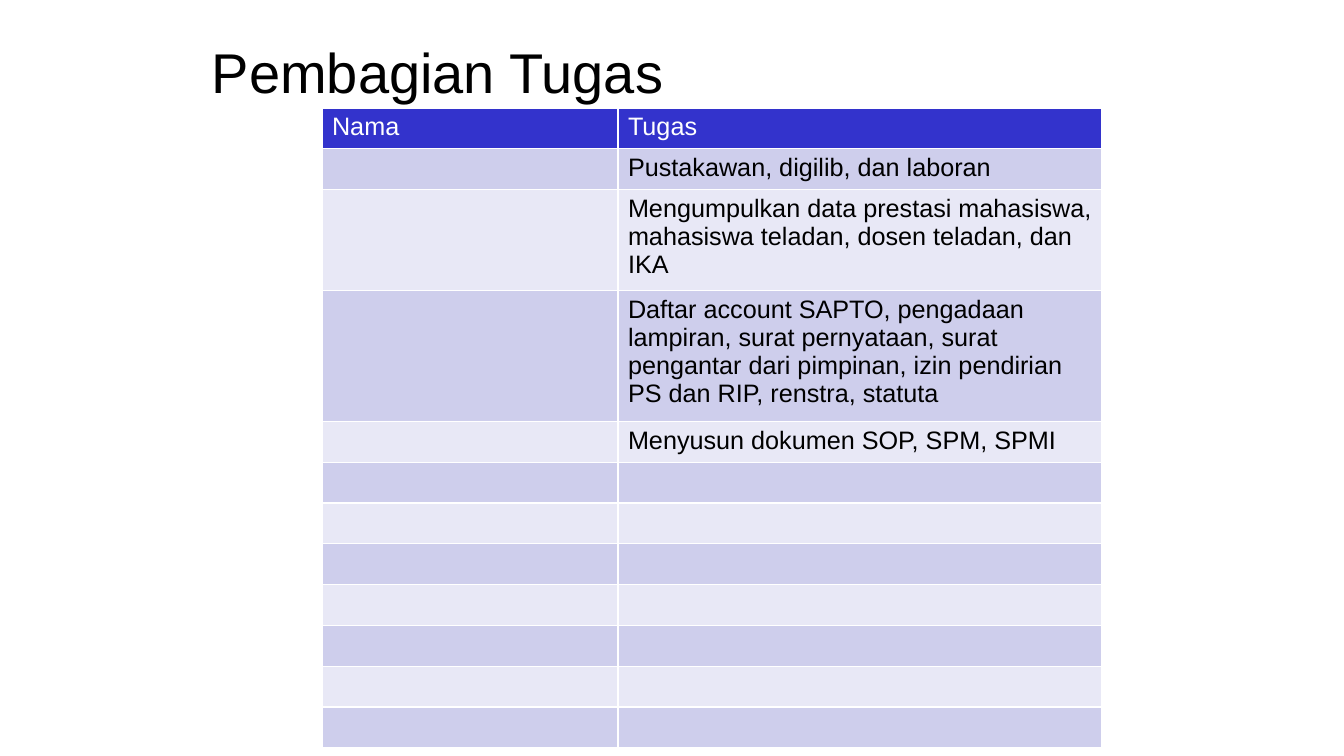
from pptx import Presentation
from pptx import util as u
from pptx.dml.color import RGBColor
from pptx.enum import text

# Content
TITLE = "Pembagian Tugas"
HEADER = ("Nama", "Tugas")
TASKS = [
    "Pustakawan, digilib, dan laboran",
    "Mengumpulkan data prestasi mahasiswa, mahasiswa teladan, dosen teladan, dan IKA",
    "Daftar account SAPTO, pengadaan lampiran, surat pernyataan, surat pengantar "
    "dari pimpinan, izin pendirian PS dan RIP, renstra, statuta",
    "Menyusun dokumen SOP, SPM, SPMI",
]
EMPTY_ROWS = 7
ROWS = [HEADER] + [("", task) for task in TASKS] + [("", "")] * EMPTY_ROWS

# Format
FONT = "Arial"
BLACK = RGBColor(0x00, 0x00, 0x00)
WHITE = RGBColor(0xFF, 0xFF, 0xFF)
BLUE = RGBColor(0x33, 0x33, 0xCC)
BANDS = (RGBColor(0xE8, 0xE8, 0xF6), RGBColor(0xCE, 0xCE, 0xEC))

# Layout in px
TITLE_BOX = (202, 25, 1087, 93)
TABLE_BOX = (322, 108, 780, 490)
COLUMN_WIDTHS = (296, 484)


def px(length):
    return u.Emu(round(length * 914400 / 100.8))


def write(frame, words, size=18, color=BLACK):
    para = frame.paragraphs[0]
    para.font.size = u.Pt(size)
    if words:
        span = para.add_run()
        span.text = words
        span.font.name = FONT
        span.font.size = u.Pt(size)
        span.font.bold = False
        span.font.color.rgb = color


deck = Presentation()
deck.slide_width, deck.slide_height = px(1344), px(756)
page = deck.slides.add_slide(deck.slide_layouts[6])

# Title
title = page.shapes.add_textbox(*map(px, TITLE_BOX)).text_frame
title.word_wrap = True
title.vertical_anchor = text.MSO_ANCHOR.MIDDLE
write(title, TITLE, size=40)

# Task table: the rows share the height and grow with their text
table = page.shapes.add_table(len(ROWS), len(HEADER), *map(px, TABLE_BOX)).table
for column, width in zip(table.columns, COLUMN_WIDTHS):
    column.width = px(width)
for row_index, row in enumerate(ROWS):
    is_header = row_index == 0
    for column_index, words in enumerate(row):
        cell = table.cell(row_index, column_index)
        cell.fill.solid()
        cell.fill.fore_color.rgb = BLUE if is_header else BANDS[row_index % 2]
        write(cell.text_frame, words, color=WHITE if is_header else BLACK)

deck.save("out.pptx")
